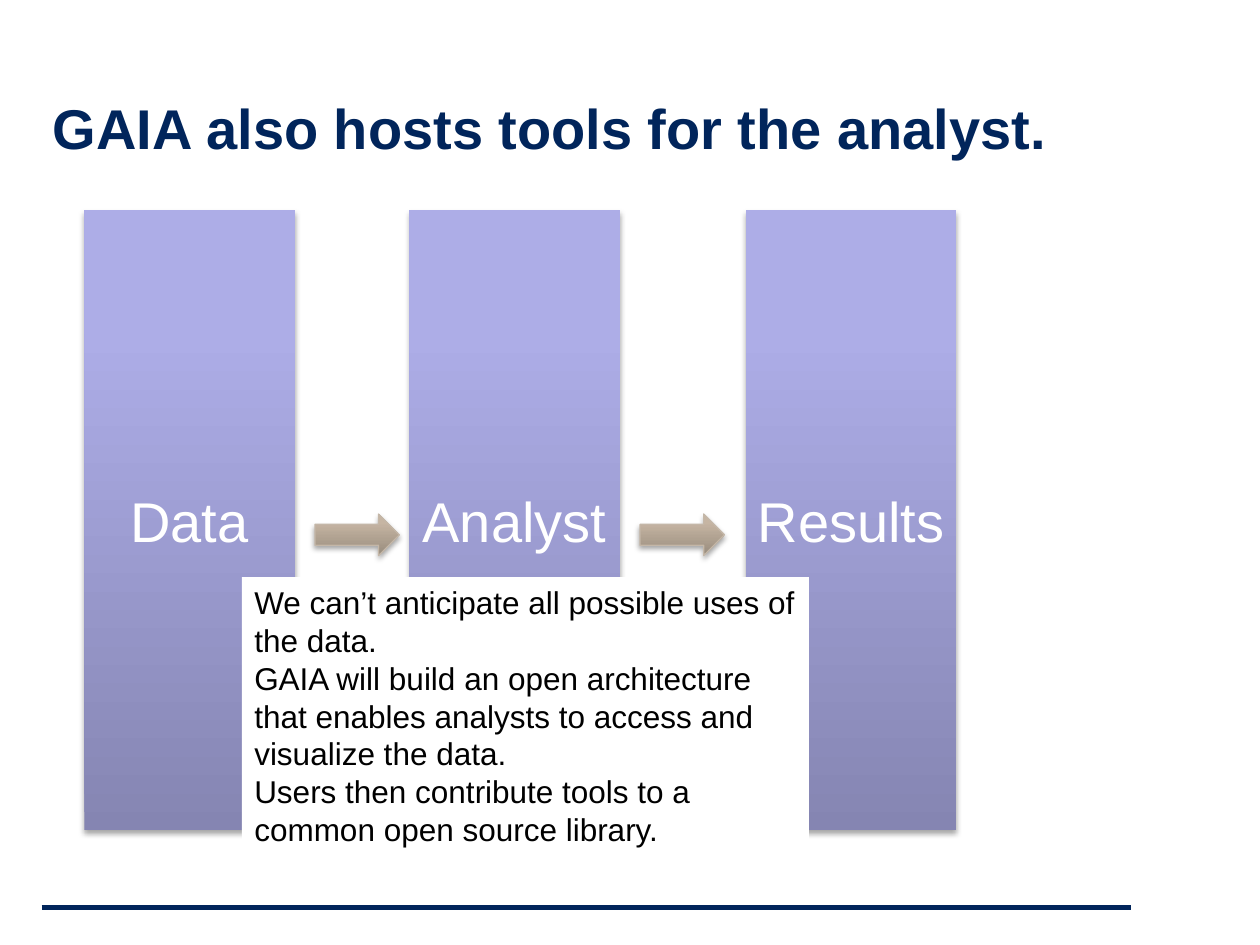
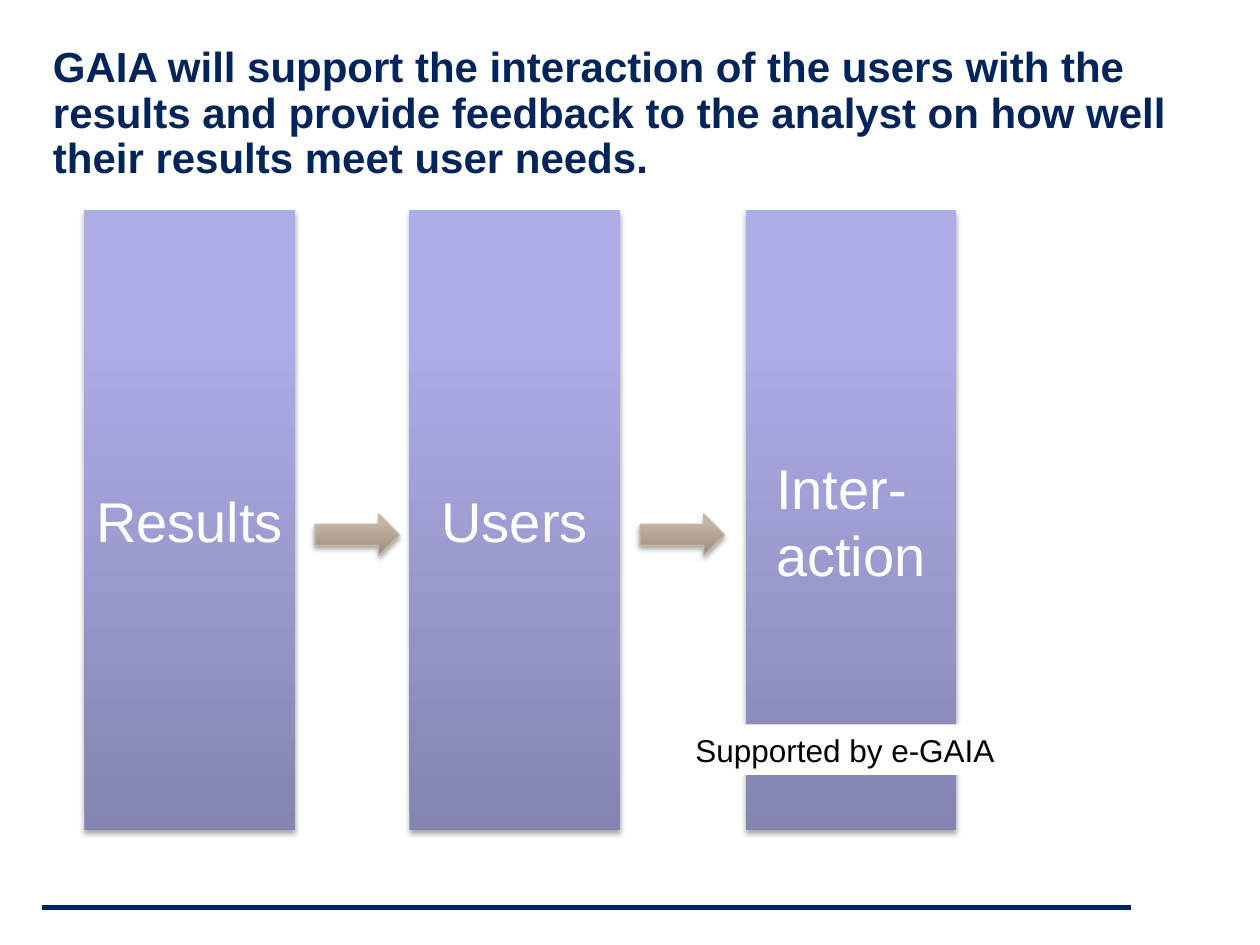
from lxml.etree import SubElement
from pptx import Presentation
from pptx.dml.color import RGBColor
from pptx.enum.shapes import MSO_CONNECTOR as Connector, MSO_SHAPE as Preset
from pptx.enum.text import MSO_ANCHOR as Anchor, MSO_AUTO_SIZE as AutoSize, PP_ALIGN as Align
from pptx.oxml.ns import qn
from pptx.util import Inches, Pt

COLORS = {"navy": "01255B", "white": "FFFFFF", "black": "000000", "arrow_edge": "C4B7A8"}
BAR_STOPS = ((0, "8585B2"), (80, "ADADE7"), (100, "ACACE9"))
ARROW_STOPS = ((0, "988C7D"), (80, "C6B5A3"), (100, "C7B6A3"))
FONT = "Arial"
BAR_LEFTS = (0.67, 3.25, 5.92)
BAR_TOP, BAR_WIDTH, BAR_HEIGHT = 1.67, 1.67, 4.92
ARROW_GAP, ARROW_TOP, ARROW_WIDTH, ARROW_HEIGHT = 0.16, 4.08, 0.67, 0.33


def rgb(name):
    return RGBColor.from_string(COLORS[name])


def inches(box):
    return [Inches(length) for length in box]


def write(frame, *texts, size=18, color="black", bold=False, anchor=Anchor.TOP,
          inset=None, wrap=True, spacing=None, auto_size=AutoSize.NONE):
    frame.auto_size = auto_size
    frame.word_wrap = wrap
    frame.vertical_anchor = anchor
    if inset is not None:
        frame.margin_left = frame.margin_right = Inches(inset)
        frame.margin_top = frame.margin_bottom = Inches(inset)
    for index, text in enumerate(texts):
        para = frame.add_paragraph() if index else frame.paragraphs[0]
        para.alignment = Align.LEFT
        para.line_spacing = spacing
        span = para.add_run()
        span.text = text
        span.font.name = FONT
        span.font.size = Pt(size)
        span.font.bold = bold
        span.font.color.rgb = rgb(color)


def add_color(parent, value):
    return SubElement(parent, qn("a:srgbClr"), val=value)


def add_shaded_shape(page, preset, box, stops):
    shape = page.shapes.add_shape(preset, *inches(box))
    shape.fill.gradient()
    shape.fill.gradient_angle = 90
    properties = shape.element.spPr
    stop_list = properties.find(f".//{qn('a:gsLst')}")
    for stop in list(stop_list):
        stop_list.remove(stop)
    for position, value in stops:
        add_color(SubElement(stop_list, qn("a:gs"), pos=str(position * 1000)), value)
    shape.shadow.inherit = False
    shadow = SubElement(properties.find(qn("a:effectLst")), qn("a:outerShdw"),
                        blurRad=str(Pt(3.1)), dist=str(Pt(1.8)), dir="5400000", rotWithShape="0")
    SubElement(add_color(shadow, COLORS["black"]), qn("a:alpha"), val="35000")
    return shape


def add_bar(page, left, label):
    bar = add_shaded_shape(page, Preset.RECTANGLE, (left, BAR_TOP, BAR_WIDTH, BAR_HEIGHT), BAR_STOPS)
    bar.line.fill.background()
    write(bar.text_frame, label, size=32, color="white", anchor=Anchor.MIDDLE, inset=0)
    bar.element.txBody.bodyPr.set("anchorCtr", "1")


def add_arrow(page, left):
    arrow = add_shaded_shape(page, Preset.RIGHT_ARROW,
                             (left, ARROW_TOP, ARROW_WIDTH, ARROW_HEIGHT), ARROW_STOPS)
    arrow.line.color.rgb = rgb("arrow_edge")
    arrow.line.width = Pt(0.75)


def add_flow(page, labels):
    for left, label in zip(BAR_LEFTS, labels):
        add_bar(page, left, label)
    for left in BAR_LEFTS[:-1]:
        add_arrow(page, left + BAR_WIDTH + ARROW_GAP)


def add_note(page, box, texts, wrap=True):
    note = page.shapes.add_textbox(*inches(box))
    note.fill.solid()
    note.fill.fore_color.rgb = rgb("white")
    write(note.text_frame, *texts, wrap=wrap, auto_size=AutoSize.SHAPE_TO_FIT_TEXT)


def add_footer_rule(page):
    rule = page.shapes.add_connector(Connector.STRAIGHT, *inches((0.33, 7.2, 8.98, 7.2)))
    rule.line.color.rgb = rgb("navy")
    rule.line.width = Pt(3)
    SubElement(rule.element.spPr, qn("a:effectLst"))


def add_flow_page(deck, title, title_top, title_size, labels):
    page = deck.slides.add_slide(deck.slide_layouts[5])
    add_footer_rule(page)
    heading = page.shapes.title
    heading.left, heading.top, heading.width, heading.height = inches((0.42, title_top, 9, 0.7))
    write(heading.text_frame, title, size=title_size, color="navy", bold=True,
          anchor=Anchor.BOTTOM, inset=0, spacing=0.9)
    add_flow(page, labels)
    return page


def main():
    deck = Presentation()
    deck.slide_width, deck.slide_height = Inches(10), Inches(7.5)

    tools = add_flow_page(deck, "GAIA also hosts tools for the analyst.", 0.58, 32,
                          ("Data", "Analyst", "Results"))
    add_note(tools, (1.92, 4.58, 4.5, 2.22), (
        "We can’t anticipate all possible uses of the data.",
        "GAIA will build an open architecture that enables analysts to access and visualize the data.",
        "Users then contribute tools to a common open source library.",
    ))

    feedback = add_flow_page(
        deck,
        "GAIA will support the interaction of the users with the results and provide "
        "feedback to the analyst on how well their results meet user needs.",
        0.75, 24, ("Results", "Users", "Inter-action"))
    add_note(feedback, (5.42, 5.75, 2.6, 0.4), ("Supported by e-GAIA",), wrap=False)

    deck.save("out.pptx")


if __name__ == "__main__":
    main()
